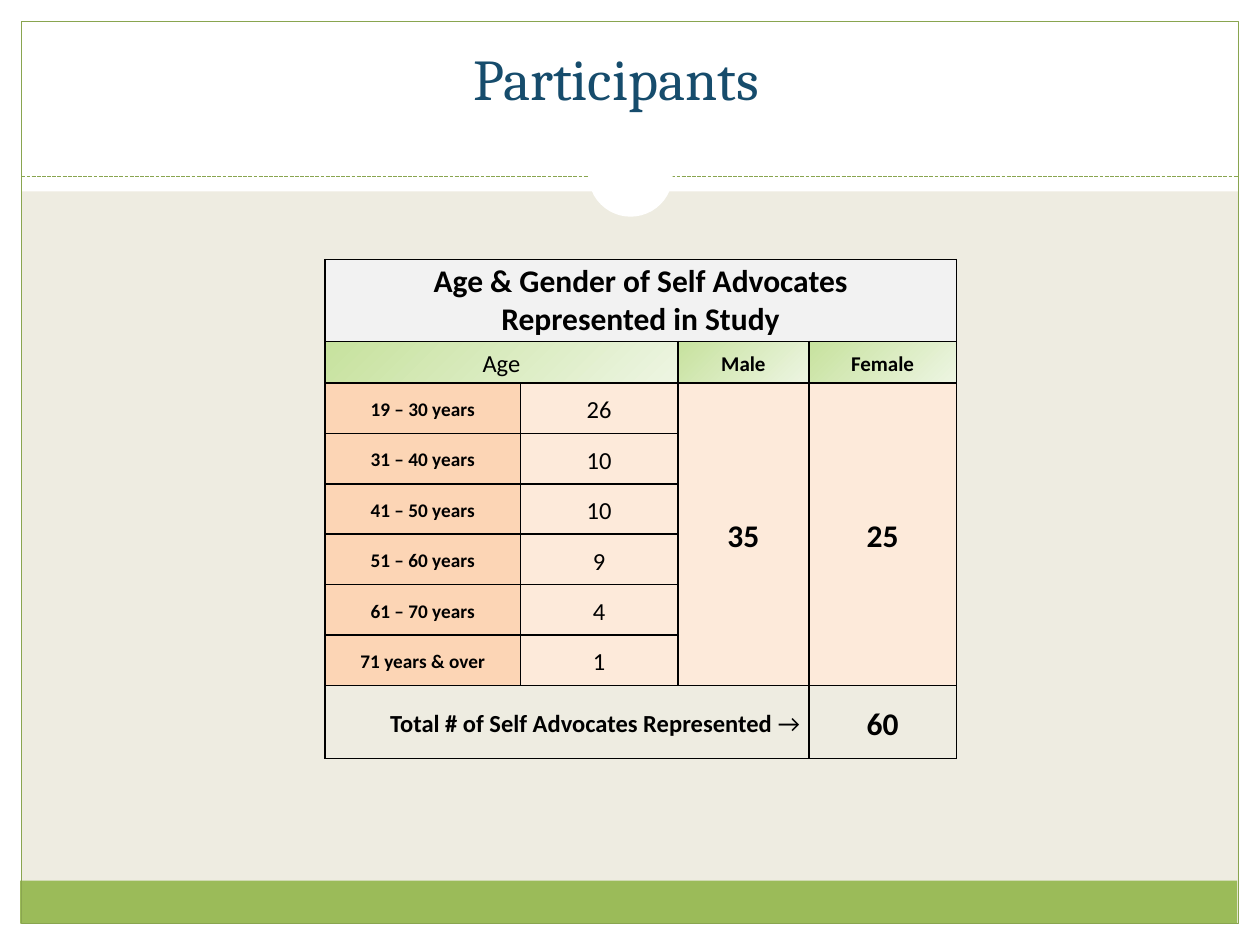
from lxml.etree import SubElement
from pptx import Presentation
from pptx.dml.color import RGBColor
from pptx.enum.dml import MSO_LINE
from pptx.enum.shapes import MSO_CONNECTOR, MSO_SHAPE
from pptx.enum.text import MSO_ANCHOR, MSO_AUTO_SIZE, PP_ALIGN
from pptx.oxml import parse_xml
from pptx.oxml.ns import nsdecls, qn
from pptx.util import Inches, Pt


def rgb(color):
    return RGBColor.from_string(color)


def add_run(p, text, **fmt):
    r = p.add_run()
    r.text = text
    r.font.color.rgb = rgb(fmt.pop("color", "000000"))
    for name, value in fmt.items():
        setattr(r.font, name, value)


prs = Presentation()
prs.slide_width, prs.slide_height = Inches(10), Inches(7.5)
s = prs.slides.add_slide(prs.slide_layouts[6])
s.background.fill.solid()
s.background.fill.fore_color.rgb = rgb("EEECE1")

# Header band, dashed rule, notch, white margins, footer band and frame
rect, oval = MSO_SHAPE.RECTANGLE, MSO_SHAPE.OVAL
decor = [
    (rect, 0, 0, 10, 1.52, "FFFFFF"),
    ("rule", 0.17, 1.4, 9.83, 1.4, "89A54F"),
    (oval, 4.67, 1.05, 0.67, 0.67, "FFFFFF"),
    (rect, 0, 7.33, 10, 0.17, "FFFFFF"),
    (rect, 0, 0, 10, 0.17, "FFFFFF"),
    (rect, 9.83, 0, 0.17, 7.5, "FFFFFF"),
    (rect, 0, 0, 0.17, 7.5, "FFFFFF"),
    (rect, 0.16, 6.99, 9.66, 0.34, "9BBB59"),
    (rect, 0.17, 0.17, 9.66, 7.16, None),
]
for kind, *box, color in decor:
    box = [Inches(v) for v in box]
    if kind == "rule":
        sp = s.shapes.add_connector(MSO_CONNECTOR.STRAIGHT, *box)
        sp.line.dash_style = MSO_LINE.SQUARE_DOT
        SubElement(sp._element.spPr, qn("a:effectLst"))
    else:
        sp = s.shapes.add_shape(kind, *box)
        sp.shadow.inherit = False
        if color:
            sp.fill.solid()
            sp.fill.fore_color.rgb = rgb(color)
            sp.line.fill.background()
            continue
        sp.fill.background()
    sp.line.color.rgb = rgb("89A54F")
    sp.line.width = Pt(0.75)

# Title
tf = s.shapes.add_textbox(Inches(3.66), Inches(0.29), Inches(2.68), Inches(0.66)).text_frame
tf.word_wrap = False
tf.auto_size = MSO_AUTO_SIZE.SHAPE_TO_FIT_TEXT
add_run(tf.paragraphs[0], "Participants", name="Cambria", size=Pt(33), color="164C6C")

# Table grid
cols = [1.55, 1.25, 1.04, 1.17]
rows = [0.65, 0.33] + [0.4] * 6 + [0.58]
table = s.shapes.add_table(len(rows), len(cols), Inches(2.58), Inches(2.06),
                           Inches(5), Inches(3.98)).table
table.first_row = table.horz_banding = False
for col, width in zip(table.columns, cols):
    col.width = Inches(width)
for row, height in zip(table.rows, rows):
    row.height = Inches(height)

# Borders and margins of every cell
for cell in table.iter_cells():
    cell.margin_left = cell.margin_right = Inches(0.07)
    cell.margin_top = cell.margin_bottom = 0
    cell.vertical_anchor = MSO_ANCHOR.MIDDLE
    tcPr = cell._tc.get_or_add_tcPr()
    for side in "LRTB":
        tcPr.append(parse_xml(
            f'<a:ln{side} {nsdecls("a")} w="12700"><a:solidFill>'
            f'<a:srgbClr val="000000"/></a:solidFill></a:ln{side}>'))

for top, left, bottom, right in [(0, 0, 0, 3), (1, 0, 1, 1), (2, 2, 7, 2),
                                 (2, 3, 7, 3), (8, 0, 8, 2)]:
    table.cell(top, left).merge(table.cell(bottom, right))

# Cell contents: row, column, lines, size, bold, fill
ages = [("19 – 30 years", 26), ("31 – 40 years", 10), ("41 – 50 years", 10),
        ("51 – 60 years", 9), ("61 – 70 years", 4), ("71 years & over", 1)]
cells = [
    (0, 0, ["Age & Gender of Self Advocates", "Represented in Study"], 18, True, "F2F2F2"),
    (1, 0, ["Age"], 14, False, "gradient"),
    (1, 2, ["Male"], 12, True, "gradient"),
    (1, 3, ["Female"], 12, True, "gradient"),
    (2, 2, ["35"], 18, True, "FDEADA"),
    (2, 3, ["25"], 18, True, "FDEADA"),
    (8, 0, ["Total # of Self Advocates Represented "], 14, True, None),
    (8, 3, ["60"], 18, True, None),
]
for i, (label, count) in enumerate(ages, start=2):
    cells += [(i, 0, [label], 11, True, "FCD5B5"),
              (i, 1, [str(count)], 14, False, "FDEADA")]

for row, col, lines, size, bold, color in cells:
    cell = table.cell(row, col)
    if color == "gradient":
        cell.fill.gradient()
        cell.fill.gradient_angle = 315
        for stop, shade in zip(cell.fill.gradient_stops, ["C7E29E", "EDF5E2"]):
            stop.color.rgb = rgb(shade)
    elif color:
        cell.fill.solid()
        cell.fill.fore_color.rgb = rgb(color)
    else:
        cell.fill.background()
    tf = cell.text_frame
    for i, line in enumerate(lines):
        p = tf.add_paragraph() if i else tf.paragraphs[0]
        p.alignment = PP_ALIGN.CENTER
        if row > 0:
            p.line_spacing = 1.15
        if row == 8 or (row, col) == (1, 0):
            p.space_after = Pt(10)
        add_run(p, line, name="Calibri", size=Pt(size), bold=bold)

# Total label points right to its value
p = table.cell(8, 0).text_frame.paragraphs[0]
p.alignment = PP_ALIGN.RIGHT
add_run(p, "→", name="Calibri", size=Pt(14), bold=False)

prs.save("out.pptx")
